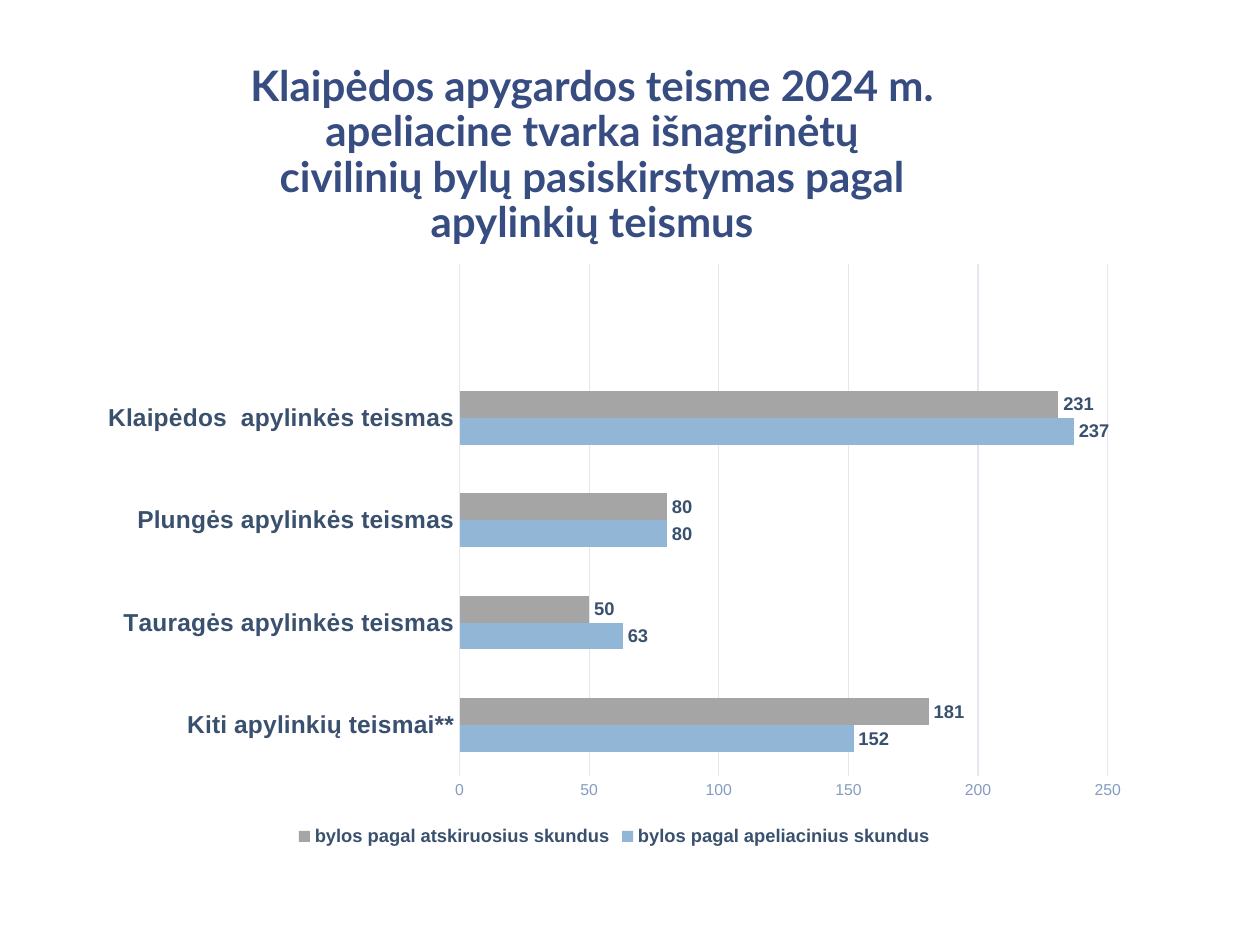
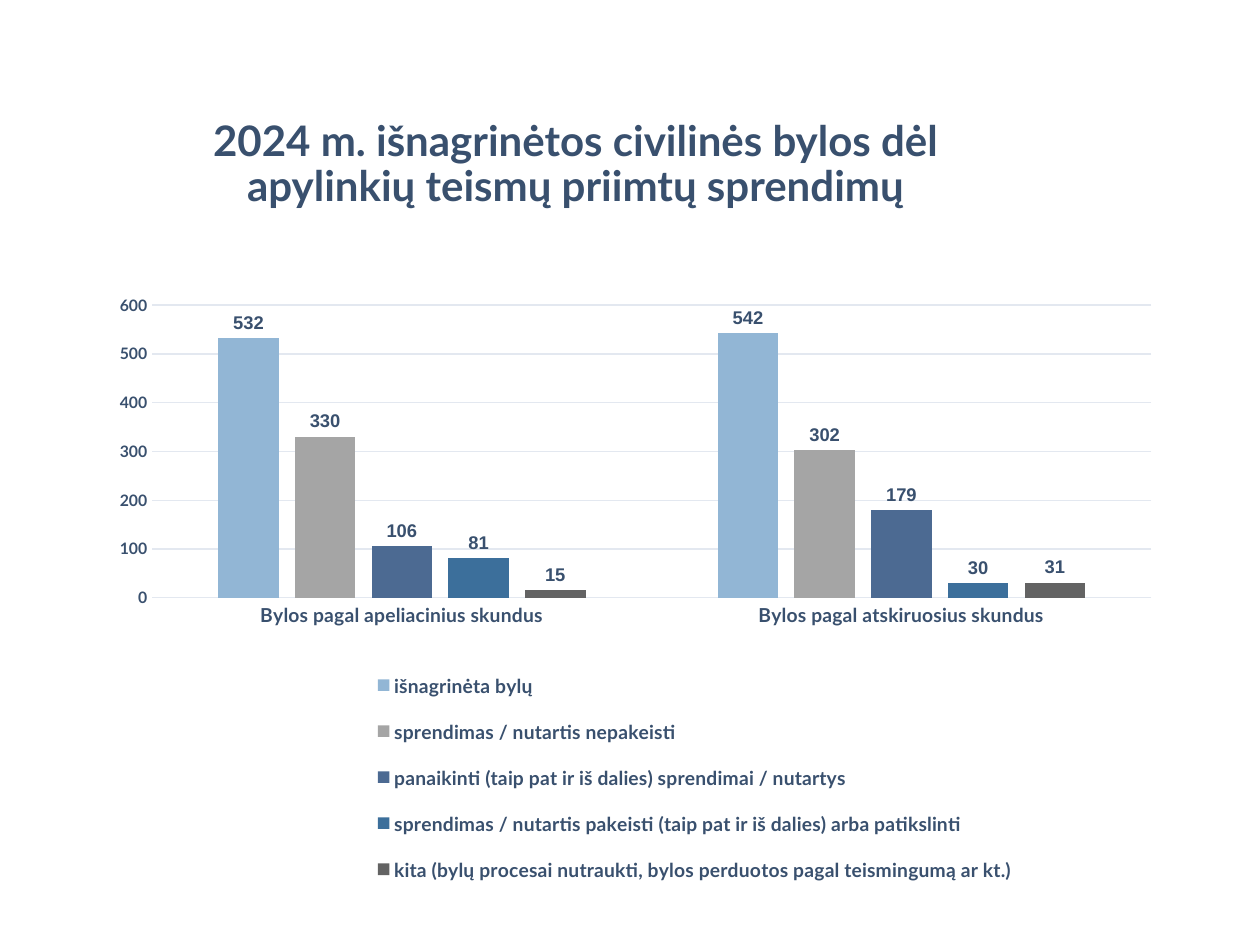
from lxml.etree import SubElement
from pptx import Presentation
from pptx.chart.data import CategoryChartData
from pptx.dml.color import RGBColor
from pptx.enum.chart import XL_CHART_TYPE, XL_LABEL_POSITION, XL_LEGEND_POSITION, XL_TICK_MARK
from pptx.enum.text import MSO_ANCHOR, PP_ALIGN
from pptx.oxml.ns import qn
from pptx.util import Pt

# Shared scale, fonts and colours
PX = 914400 / 126
HEADING_FONT, CHART_FONT = "Lato", "Arial"
INDIGO = RGBColor(0x37, 0x4C, 0x80)
NAVY = RGBColor(0x39, 0x50, 0x6E)
SLATE = RGBColor(0x4C, 0x6A, 0x92)
MIST = RGBColor(0x84, 0x9D, 0xBF)
GRID = RGBColor(0xE3, 0xE8, 0xF0)
LIGHT_BLUE = RGBColor(0x92, 0xB6, 0xD5)
GREY = RGBColor(0xA5, 0xA5, 0xA5)
BLUE = RGBColor(0x3C, 0x6F, 0x9B)
DARK_GREY = RGBColor(0x63, 0x63, 0x63)


def px(n):
    return round(n * PX)


def set_font(font, name, size, color, bold=False):
    font.name, font.size, font.bold = name, Pt(size), bold
    font.color.rgb = color


def add_title(s, box, text, color):
    tf = s.shapes.add_textbox(*map(px, box)).text_frame
    tf.word_wrap = True
    tf.vertical_anchor = MSO_ANCHOR.MIDDLE
    tf.margin_top, tf.margin_bottom = px(6), px(52)  # lifts the text by half a line
    p = tf.paragraphs[0]
    p.alignment = PP_ALIGN.CENTER
    p.line_spacing = 0.9
    r = p.add_run()
    r.text = text
    set_font(r.font, HEADING_FONT, 24, color, True)


def style_axis(axis, font):
    axis.major_tick_mark = axis.minor_tick_mark = XL_TICK_MARK.NONE
    set_font(axis.tick_labels.font, *font)


def style_line(line):
    line.color.rgb = GRID
    line.width = Pt(0.75)


def add_chart(s, kind, box, categories, series, gap, overlap,
              cat_font, val_font, legend_font):
    data = CategoryChartData()
    data.categories = categories
    for name, values, _ in series:
        data.add_series(name, values)
    chart = s.shapes.add_chart(kind, *map(px, box), data).chart
    chart.has_title = False
    set_font(chart.font, CHART_FONT, 10, SLATE)

    # Axes
    style_axis(chart.category_axis, cat_font)
    style_line(chart.category_axis.format.line)
    style_axis(chart.value_axis, val_font)
    chart.value_axis.format.line.fill.background()
    chart.value_axis.has_major_gridlines = True
    style_line(chart.value_axis.major_gridlines.format.line)

    # Bars and value labels
    plot = chart.plots[0]
    plot.vary_by_categories = False
    plot.gap_width, plot.overlap = gap, overlap
    for bars, (_, _, color) in zip(plot.series, series):
        bars.format.fill.solid()
        bars.format.fill.fore_color.rgb = color
        bars.invert_if_negative = False
        labels = bars.data_labels
        labels.show_value = True
        labels.position = XL_LABEL_POSITION.OUTSIDE_END
        set_font(labels.font, CHART_FONT, 10.5, NAVY, True)

    # Legend
    chart.has_legend = True
    chart.legend.position = XL_LEGEND_POSITION.BOTTOM
    chart.legend.include_in_layout = False
    set_font(chart.legend.font, *legend_font)
    return chart


def place(part, index, x, y, w, h, inner=False):
    """Give a chart part a fixed place, in fractions of the chart."""
    for old in part.findall(qn("c:layout")):
        part.remove(old)
    layout = SubElement(part, qn("c:layout"))
    part.insert(index, layout)
    manual = SubElement(layout, qn("c:manualLayout"))
    settings = [("layoutTarget", "inner")] if inner else []
    settings += [("xMode", "edge"), ("yMode", "edge"),
                 ("x", x), ("y", y), ("w", w), ("h", h)]
    for tag, value in settings:
        SubElement(manual, qn("c:" + tag)).set("val", str(value))


def build_courts_slide(s):
    add_title(s, (238, 125, 708, 108),
              "Klaipėdos apygardos teisme 2024 m. apeliacine tvarka išnagrinėtų "
              "civilinių bylų pasiskirstymas pagal apylinkių teismus", INDIGO)
    # The unnamed last category leaves free room above the bars
    courts = ["Kiti apylinkių teismai**", "Tauragės apylinkės teismas",
              "Plungės apylinkės teismas", "Klaipėdos  apylinkės teismas", ""]
    series = [
        ("bylos pagal apeliacinius skundus", (152, 63, 80, 237, None), LIGHT_BLUE),
        ("bylos pagal atskiruosius skundus", (181, 50, 80, 231, None), GREY),
    ]
    add_chart(s, XL_CHART_TYPE.BAR_CLUSTERED, (87, 252, 1055, 600), courts, series,
              gap=182, overlap=0,
              cat_font=(CHART_FONT, 14, NAVY, True),
              val_font=(CHART_FONT, 9, MIST),
              legend_font=(CHART_FONT, 10.5, NAVY, True))


def build_outcomes_slide(s):
    add_title(s, (161, 144, 829, 89),
              "2024 m. išnagrinėtos civilinės bylos dėl apylinkių teismų "
              "priimtų sprendimų", NAVY)
    complaints = ["Bylos pagal apeliacinius skundus", "Bylos pagal atskiruosius skundus"]
    series = [
        ("išnagrinėta bylų", (532, 542), LIGHT_BLUE),
        ("sprendimas / nutartis nepakeisti", (330, 302), GREY),
        ("panaikinti (taip pat ir iš dalies) sprendimai / nutartys", (106, 179), SLATE),
        ("sprendimas / nutartis pakeisti (taip pat ir iš dalies) arba patikslinti",
         (81, 30), BLUE),
        ("kita (bylų procesai nutraukti, bylos perduotos pagal teismingumą ar kt.)",
         (15, 31), DARK_GREY),
    ]
    chart = add_chart(s, XL_CHART_TYPE.COLUMN_CLUSTERED, (87, 252, 1086, 665),
                      complaints, series, gap=219, overlap=-27,
                      cat_font=(HEADING_FONT, 11, NAVY, True),
                      val_font=(HEADING_FONT, 9, NAVY, True),
                      legend_font=(HEADING_FONT, 11, NAVY, True))
    place(chart._chartSpace.chart.plotArea, 0, 0.06, 0.08, 0.92, 0.44, inner=True)
    place(chart.legend._element, 1, 0.26, 0.6, 0.6, 0.38)


def main():
    prs = Presentation()
    prs.slide_width, prs.slide_height = px(1260), px(945)
    for build in (build_courts_slide, build_outcomes_slide):
        build(prs.slides.add_slide(prs.slide_layouts[6]))
    prs.save("out.pptx")


if __name__ == "__main__":
    main()
